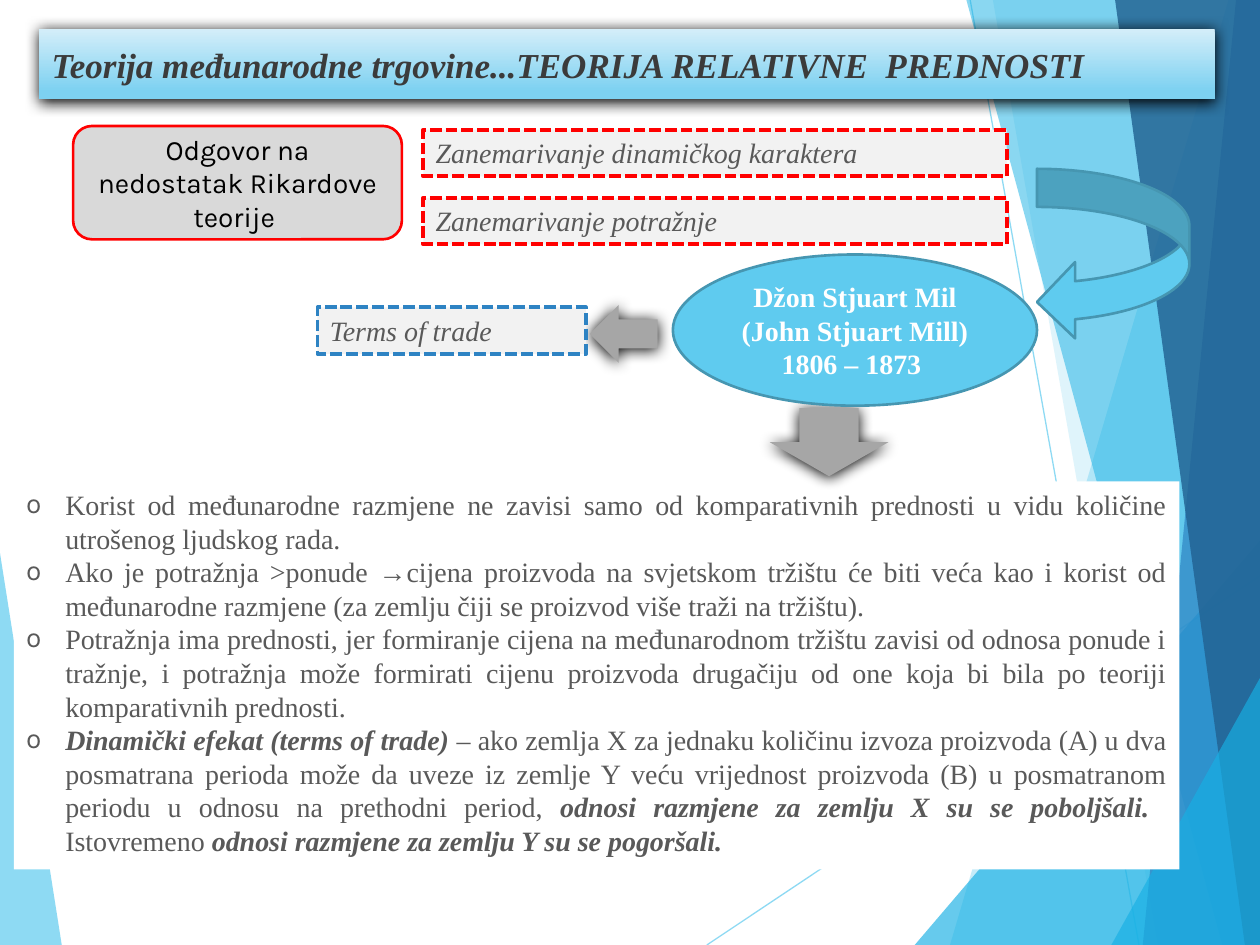
from lxml.etree import SubElement
from pptx import Presentation
from pptx.dml.color import RGBColor
from pptx.enum.dml import MSO_LINE
from pptx.enum.shapes import MSO_CONNECTOR, MSO_SHAPE
from pptx.enum.text import MSO_ANCHOR, MSO_AUTO_SIZE, PP_ALIGN
from pptx.oxml import parse_xml
from pptx.oxml.ns import nsdecls, qn
from pptx.util import Inches, Pt

SKY = RGBColor(0x5F, 0xCB, 0xEF)
CYAN = RGBColor(0x17, 0xB0, 0xE4)
BLUE = RGBColor(0x2E, 0x83, 0xC3)
NAVY = RGBColor(0x22, 0x62, 0x92)
TEAL = RGBColor(0x46, 0x96, 0xB1)
RED = RGBColor(0xFF, 0x00, 0x00)
BLACK = RGBColor(0x00, 0x00, 0x00)
WHITE = RGBColor(0xFF, 0xFF, 0xFF)
INK = RGBColor(0x59, 0x59, 0x59)
TITLE_INK = RGBColor(0x3B, 0x3B, 0x3B)
TITLE_TOP = RGBColor(0xD4, 0xEE, 0xF9)
TITLE_BOTTOM = RGBColor(0x7D, 0xD1, 0xF1)
PALE = RGBColor(0xF2, 0xF2, 0xF2)
SILVER = RGBColor(0xD9, 0xD9, 0xD9)
GREY = RGBColor(0xA6, 0xA6, 0xA6)

SERIF = "Times New Roman"
SANS = "Karla"

FACETS = [
    ([(0, 4.39), (0.49, 7.5), (0, 7.5)], SKY, 70),
    ([(9.75, 0), (7.54, 7.5), (10, 7.5), (10, 0)], SKY, 36),
    ([(7.88, 0), (9.19, 7.5), (10, 7.5), (10, 0)], SKY, 20),
    ([(7.26, 7.5), (10, 4.29), (10, 7.5)], CYAN, 66),
    ([(7.67, 0), (9.7, 7.5), (10, 7.5), (10, 0)], CYAN, 50),
    ([(9.81, 0), (9.07, 7.5), (10, 7.5), (10, 0)], BLUE, 70),
    ([(8.85, 0), (9.88, 7.5), (10, 7.5), (10, 0)], NAVY, 82),
    ([(8.82, 7.5), (10, 5.38), (10, 7.5)], CYAN, 66),
]
RAYS = [((5.61, 7.5), (10, 4.57)), ((7.7, 0), (9.04, 7.5))]

POINTS = [
    [("Korist od međunarodne razmjene ne zavisi samo od komparativnih prednosti u vidu "
      "količine utrošenog ljudskog rada.", False)],
    [("Ako je potražnja >ponude →cijena proizvoda na svjetskom tržištu će biti veća kao i "
      "korist od međunarodne razmjene (za zemlju čiji se proizvod više traži na tržištu). ", False)],
    [("Potražnja ima prednosti, jer formiranje cijena na međunarodnom tržištu zavisi od "
      "odnosa ponude i tražnje, i potražnja može formirati cijenu proizvoda drugačiju od one "
      "koja bi bila po teoriji komparativnih prednosti. ", False)],
    [("Dinamički efekat (terms of trade) ", True),
     ("– ako zemlja X za jednaku količinu izvoza proizvoda (A) u dva posmatrana perioda može "
      "da uveze iz zemlje Y veću vrijednost proizvoda (B) u posmatranom periodu u odnosu na "
      "prethodni period, ", False),
     ("odnosi razmjene za zemlju X su se poboljšali.  ", True),
     ("Istovremeno", False),
     (" odnosi razmjene za zemlju Y su se pogoršali. ", True)],
]
REMARKS = [
    ("Zanemarivanje dinamičkog karaktera ", (3.36, 1.03, 4.63, 0.37), RED),
    ("Zanemarivanje potražnje ", (3.36, 1.57, 4.63, 0.37), RED),
    ("Terms of trade ", (2.52, 2.44, 2.13, 0.37), BLUE),
]


def write(frame, paragraphs, size=16, font=SERIF, color=INK, bold=False, italic=False,
          align=PP_ALIGN.LEFT, anchor=MSO_ANCHOR.TOP, leading=19.2, bullet=None):
    frame.word_wrap = True
    frame.auto_size = MSO_AUTO_SIZE.NONE
    frame.vertical_anchor = anchor
    for index, pieces in enumerate(paragraphs):
        paragraph = frame.add_paragraph() if index else frame.paragraphs[0]
        paragraph.alignment = align
        paragraph.line_spacing = Pt(leading)
        if bullet:
            props = paragraph._p.get_or_add_pPr()
            props.set("marL", str(Inches(0.31)))
            props.set("indent", str(-Inches(0.31)))
            SubElement(props, qn("a:buFont"), typeface=SANS)
            SubElement(props, qn("a:buChar"), char=bullet)
        for text, emphasis in pieces:
            run = paragraph.add_run()
            run.text = text
            run.font.name = font
            run.font.size = Pt(size)
            run.font.color.rgb = color
            run.font.bold = bold or emphasis
            run.font.italic = italic or emphasis


class SlideBuilder:
    def __init__(self, slide):
        self.slide = slide
        self.shapes = slide.shapes

    def set_alpha(self, properties, percent):
        color = next(properties.iter(qn("a:srgbClr")))
        SubElement(color, qn("a:alpha"), val=str(percent * 1000))

    def cast_shadow(self, shape):
        shape.shadow.inherit = False
        effects = shape._element.spPr.find(qn("a:effectLst"))
        shadow = SubElement(effects, qn("a:outerShdw"), blurRad=str(Pt(8.5)), dist=str(Pt(1)),
                            dir="5400000", algn="ctr", rotWithShape="0")
        SubElement(shadow, qn("a:srgbClr"), val=str(BLACK))

    def facet(self, points, color, alpha):
        corners = [(Inches(x), Inches(y)) for x, y in points]
        outline = self.shapes.build_freeform(*corners[0])
        outline.add_line_segments(corners[1:], close=True)
        shape = outline.convert_to_shape()
        shape.shadow.inherit = False
        shape.fill.solid()
        shape.fill.fore_color.rgb = color
        shape.line.fill.background()
        self.set_alpha(shape._element.spPr, alpha)

    def ray(self, start, end):
        line = self.shapes.add_connector(MSO_CONNECTOR.STRAIGHT,
                                         *(Inches(value) for value in start + end))
        line.line.color.rgb = SKY
        line.line.width = Pt(0.75)
        self.set_alpha(line._element.spPr, 70)
        SubElement(line._element.spPr, qn("a:effectLst"))

    def title(self, text, box):
        title = self.shapes.title
        title.left, title.top, title.width, title.height = (Inches(value) for value in box)
        title._element.spPr.insert(1, parse_xml(
            f'<a:prstGeom {nsdecls("a")} prst="roundRect"><a:avLst/></a:prstGeom>'))
        title.fill.gradient()
        title.fill.gradient_angle = 270
        for stop, color, position in zip(title.fill.gradient_stops,
                                         (TITLE_TOP, TITLE_BOTTOM), (0, 0.88)):
            stop.color.rgb = color
            stop.position = position
        self.cast_shadow(title)
        frame = title.text_frame
        frame.margin_left = frame.margin_right = Inches(0.1)
        frame.margin_top = frame.margin_bottom = Inches(0.04)
        write(frame, [[(text, False)]], size=20, color=TITLE_INK, bold=True, italic=True,
              anchor=MSO_ANCHOR.MIDDLE, leading=24)
        self.shapes._spTree.append(title._element)

    def block(self, kind, box, fill, line=None, width=1.5, dash=None):
        shape = self.shapes.add_shape(kind, *(Inches(value) for value in box))
        shape.shadow.inherit = False
        shape.fill.solid()
        shape.fill.fore_color.rgb = fill
        if line is None:
            shape.line.fill.background()
        else:
            shape.line.color.rgb = line
            shape.line.width = Pt(width)
            shape.line.dash_style = dash
        return shape

    def arrow(self, box, rotation):
        shape = self.block(MSO_SHAPE.RIGHT_ARROW, box, GREY)
        shape.rotation = rotation
        self.cast_shadow(shape)

    def remark(self, text, box, color):
        shape = self.block(MSO_SHAPE.RECTANGLE, box, PALE, color, 2.25, MSO_LINE.SQUARE_DOT)
        write(shape.text_frame, [[(text, False)]], italic=True, align=PP_ALIGN.JUSTIFY)


def main():
    deck = Presentation()
    deck.slide_width, deck.slide_height = Inches(10), Inches(7.5)
    page = SlideBuilder(deck.slides.add_slide(deck.slide_layouts[5]))

    page.facet(*FACETS[0])
    for start, end in RAYS:
        page.ray(start, end)
    for facet in FACETS[1:]:
        page.facet(*facet)

    page.title("Teorija međunarodne trgovine...TEORIJA RELATIVNE  PREDNOSTI",
               (0.31, 0.23, 9.33, 0.56))

    answer = page.block(MSO_SHAPE.ROUNDED_RECTANGLE, (0.58, 1, 2.61, 0.9), SILVER, RED)
    write(answer.text_frame, [[("Odgovor na nedostatak Rikardove teorije ", False)]],
          font=SANS, color=BLACK, align=PP_ALIGN.CENTER, anchor=MSO_ANCHOR.MIDDLE)

    findings = page.block(MSO_SHAPE.RECTANGLE, (0.11, 3.82, 9.25, 3.08), WHITE)
    write(findings.text_frame, POINTS, align=PP_ALIGN.JUSTIFY, bullet="o")

    page.arrow((6.31, 3.04, 0.54, 0.94), 90)
    economist = page.block(MSO_SHAPE.OVAL, (5.34, 2.02, 2.89, 1.2), SKY, TEAL)
    write(economist.text_frame, [[("Džon Stjuart Mil (John Stjuart Mill) 1806 – 1873 ", False)]],
          color=WHITE, bold=True, align=PP_ALIGN.CENTER, anchor=MSO_ANCHOR.MIDDLE)

    page.block(MSO_SHAPE.CURVED_LEFT_ARROW, (8.23, 1.34, 1.21, 1.36), SKY, TEAL)
    page.arrow((4.68, 2.42, 0.54, 0.46), 180)
    for text, box, color in REMARKS:
        page.remark(text, box, color)

    deck.save("out.pptx")


if __name__ == "__main__":
    main()
